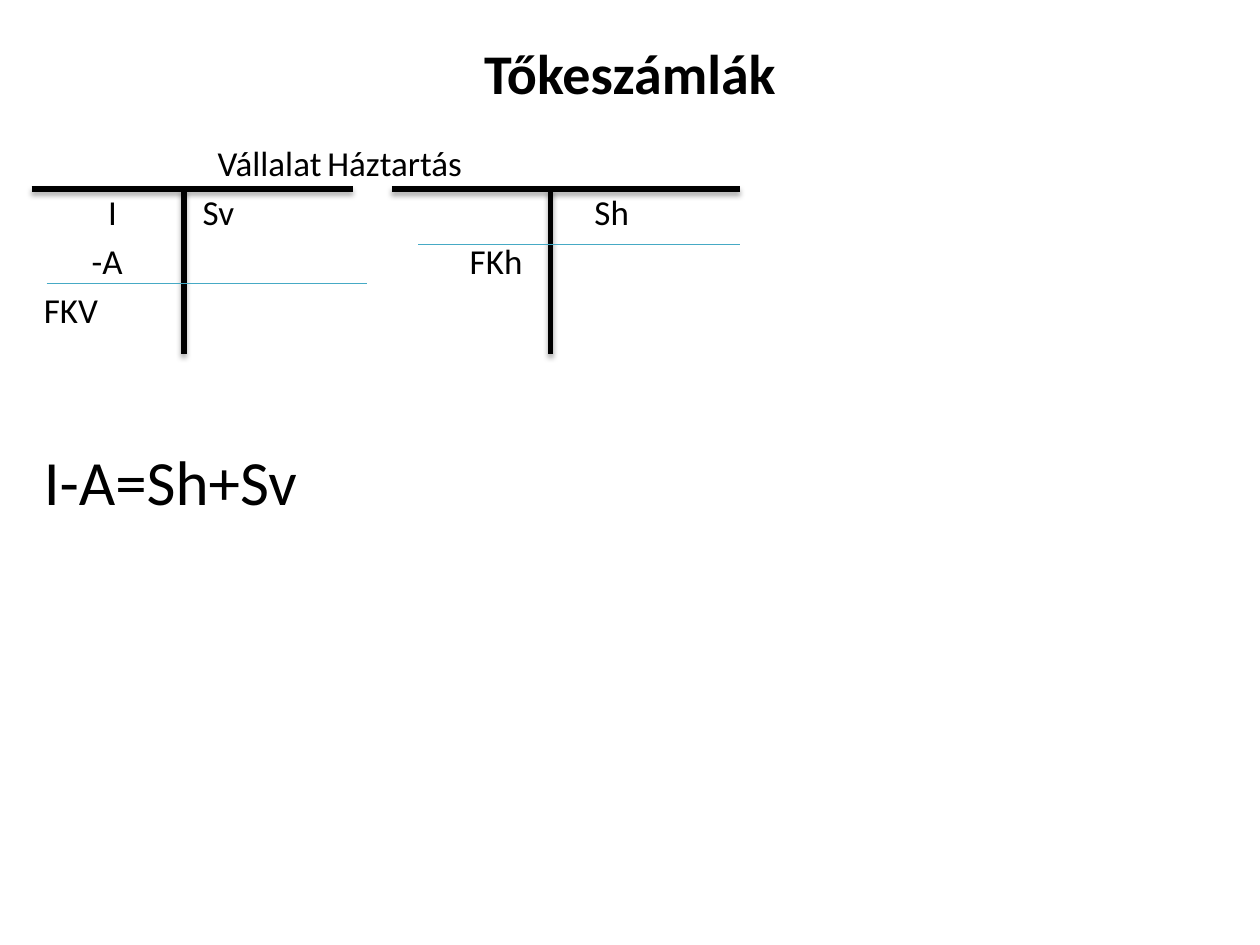
from lxml import etree
from pptx import Presentation
from pptx.dml.color import RGBColor
from pptx.enum.shapes import MSO_CONNECTOR as CONN
from pptx.enum.text import MSO_ANCHOR as ANCHOR, PP_ALIGN as ALIGN
from pptx.oxml.ns import qn
from pptx.util import Inches, Pt


def rgb(hex_color):
    return RGBColor.from_string(hex_color)


class SlideBuilder:
    font, ink, accent = "Calibri", "000000", "46AAC5"

    def __init__(self, slide):
        self.s = slide

    def box(self, x, y, w, h, anchor=ANCHOR.TOP):
        tf = self.s.shapes.add_textbox(*map(Inches, (x, y, w, h))).text_frame
        tf.word_wrap = True
        tf.vertical_anchor = anchor
        return tf

    def paragraph(self, p, text, size, bold=False, align=ALIGN.LEFT, before=0, tabs=()):
        p.text = text
        p.alignment = align
        p.space_before = Pt(before)
        if tabs:
            tab_list = etree.SubElement(p._p.get_or_add_pPr(), qn("a:tabLst"))
            for pos in tabs:
                etree.SubElement(tab_list, qn("a:tab"), pos=str(Inches(pos)), algn="l")
        for r in p.runs:
            f = r.font
            f.name, f.size, f.bold = self.font, Pt(size), bold
            f.color.rgb = rgb(self.ink)

    def line(self, x1, y1, x2, y2, color, width, shadow=False):
        c = self.s.shapes.add_connector(CONN.STRAIGHT, *map(Inches, (x1, y1, x2, y2)))
        c.line.color.rgb = rgb(color)
        c.line.width = Pt(width)
        effects = etree.SubElement(c._element.spPr, qn("a:effectLst"))
        if shadow:
            shade = etree.SubElement(effects, qn("a:outerShdw"), blurRad=str(Pt(3.1)),
                                     dist=str(Pt(1.8)), dir="5400000", rotWithShape="0")
            clr = etree.SubElement(shade, qn("a:srgbClr"), val=self.ink)
            etree.SubElement(clr, qn("a:alpha"), val="35000")

    def bar(self, x1, y1, x2, y2):
        self.line(x1, y1, x2, y2, self.ink, 3, shadow=True)

    def rule(self, x1, x2, y):
        self.line(x1, y, x2, y, self.accent, 0.75)


def main():
    prs = Presentation()
    prs.slide_width, prs.slide_height = Inches(10), Inches(7.5)
    b = SlideBuilder(prs.slides.add_slide(prs.slide_layouts[6]))

    # Title
    tf = b.box(0.5, 0.3, 9, 0.54, ANCHOR.MIDDLE)
    b.paragraph(tf.paragraphs[0], "Tőkeszámlák", 32, bold=True, align=ALIGN.CENTER)

    # Account entries and the resulting identity: text, size, space before, tab stops
    rows = [
        ("\tVállalat\tHáztartás", 20, 0, (1.38, 2.25)),
        ("\tI\tSv\tSh", 20, 4, (0.51, 1.26, 4.37)),
        ("\t-A\tFKh", 20, 4, (0.38, 3.38)),
        ("FKV", 20, 4, ()),
        ("I-A=Sh+Sv", 36, 64, ()),
    ]
    tf = b.box(0.25, 1.07, 9, 5.47)
    for i, (text, size, before, tabs) in enumerate(rows):
        p = tf.add_paragraph() if i else tf.paragraphs[0]
        b.paragraph(p, text, size, before=before, tabs=tabs)

    # T-accounts: top bars, then stems
    top, bottom = 1.5, 2.81
    for left, right in ((0.25, 2.8), (3.11, 5.87)):
        b.bar(left, top, right, top)
    for x in (1.46, 4.37):
        b.bar(x, top, x, bottom)

    # Balance lines
    b.rule(0.37, 2.91, 2.25)
    b.rule(3.32, 5.87, 1.94)

    prs.save("out.pptx")


if __name__ == "__main__":
    main()
